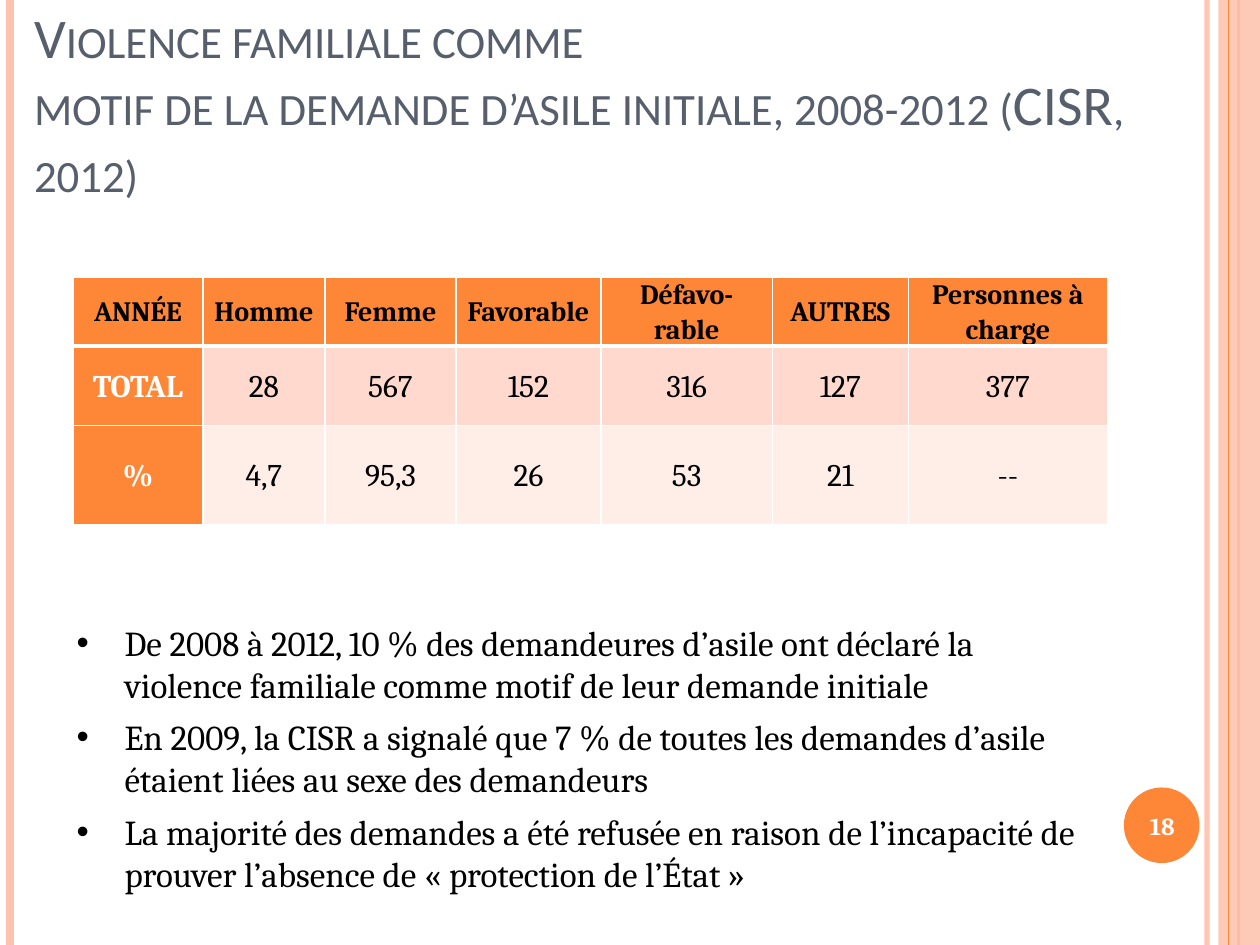
from lxml.etree import SubElement
from pptx import Presentation
from pptx.dml.color import RGBColor
from pptx.enum.shapes import MSO_CONNECTOR, MSO_SHAPE
from pptx.enum.text import MSO_ANCHOR, MSO_AUTO_SIZE, PP_ALIGN
from pptx.oxml import parse_xml
from pptx.oxml.ns import nsdecls, qn
from pptx.util import Inches, Pt

ORANGE, PEACH, WHITE, BLACK, SLATE = "FE8637", "FEC3AE", "FFFFFF", "000000", "575F6D"
WIDTH, HEIGHT = 10, 7.5

HEADING = "Violence familiale comme\vmotif de la demande d’asile initiale, 2008-2012 (CISR, 2012)"
OUTCOMES = [
    ["ANNÉE", "Homme", "Femme", "Favorable", "Défavo-rable", "AUTRES", "Personnes à charge"],
    ["TOTAL", "28", "567", "152", "316", "127", "377"],
    ["%", "4,7", "95,3", "26", "53", "21", "--"],
]
COLUMN_WIDTHS = [1.03, 0.97, 1.04, 1.15, 1.36, 1.08, 1.58]
ROW_HEIGHTS = [0.45, 0.63, 0.79]
ROW_FILLS = [ORANGE, "FFD9CE", "FFEDE8"]
FINDINGS = [
    "De 2008 à 2012, 10 % des demandeures d’asile ont déclaré la violence familiale comme motif de leur demande initiale",
    "En 2009, la CISR a signalé que 7 % de toutes les demandes d’asile étaient liées au sexe des demandeurs",
    "La majorité des demandes a été refusée en raison de l’incapacité de prouver l’absence de « protection de l’État »",
]
PAGE_NUMBER = "18"
STRIPES = [(9.58, PEACH, 3, 93), (0.08, PEACH, 4.5, 100), (9.83, ORANGE, 1.5, 100), (9.75, ORANGE, 0.75, 100)]


def color(value):
    return RGBColor.from_string(value)


def box(*lengths):
    return [Inches(length) for length in lengths]


def style(paragraph, size, tint, bold=False, font="Cambria"):
    for run in paragraph.runs:
        run.font.size = Pt(size)
        run.font.name = font
        run.font.bold = bold
        run.font.color.rgb = color(tint)


def set_opacity(properties, percent):
    tint = next(properties.iter(qn("a:srgbClr")))
    SubElement(tint, qn("a:alpha"), val=str(percent * 1000))


def add_stripe(slide, x, tint, weight, opacity):
    stripe = slide.shapes.add_connector(MSO_CONNECTOR.STRAIGHT, *box(x, 0, x, HEIGHT))
    stripe.line.color.rgb = color(tint)
    stripe.line.width = Pt(weight)
    properties = stripe._element.spPr
    set_opacity(properties, opacity)
    SubElement(properties, qn("a:effectLst"))


def add_solid(slide, preset, place, tint):
    solid = slide.shapes.add_shape(preset, *box(*place))
    solid.shadow.inherit = False
    solid.fill.solid()
    solid.fill.fore_color.rgb = color(tint)
    solid.line.fill.background()
    return solid


def add_frame(slide, place):
    frame = slide.shapes.add_textbox(*box(*place)).text_frame
    frame.word_wrap = True
    return frame


def set_borders(cell, top, bottom):
    for index, (side, weight) in enumerate(zip("LRTB", (1, 1, top, bottom))):
        cell._tc.get_or_add_tcPr().insert(index, parse_xml(
            f'<a:ln{side} {nsdecls("a")} w="{Pt(weight)}"><a:solidFill>'
            f'<a:srgbClr val="{WHITE}"/></a:solidFill></a:ln{side}>'))


def add_decoration(slide):
    for stripe in STRIPES[:3]:
        add_stripe(slide, *stripe)
    band = add_solid(slide, MSO_SHAPE.RECTANGLE, (9.67, 0, WIDTH - 9.67, HEIGHT), PEACH)
    set_opacity(band._element.spPr, 87)
    add_stripe(slide, *STRIPES[3])
    add_solid(slide, MSO_SHAPE.OVAL, (8.92, 6.25, 0.6, 0.6), ORANGE)


def add_heading(slide):
    title = slide.shapes.title
    title.left, title.top, title.width, title.height = box(0.17, 0.67, 9.33, 1)
    frame = title.text_frame
    frame.text = HEADING
    frame.word_wrap = True
    frame.auto_size = MSO_AUTO_SIZE.NONE
    frame.vertical_anchor = MSO_ANCHOR.BOTTOM
    paragraph = frame.paragraphs[0]
    paragraph.alignment = PP_ALIGN.LEFT
    style(paragraph, 32, SLATE, font="Calibri")
    for run in paragraph.runs:
        run.font._element.set("cap", "small")


def add_outcomes(slide):
    place = box(0.58, 2.2, sum(COLUMN_WIDTHS), sum(ROW_HEIGHTS))
    table = slide.shapes.add_table(len(OUTCOMES), len(COLUMN_WIDTHS), *place).table
    table.first_col = True
    for column, width in zip(table.columns, COLUMN_WIDTHS):
        column.width = Inches(width)
    for row, height in zip(table.rows, ROW_HEIGHTS):
        row.height = Inches(height)
    for r, values in enumerate(OUTCOMES):
        for c, value in enumerate(values):
            cell = table.cell(r, c)
            cell.text = value
            cell.vertical_anchor = MSO_ANCHOR.MIDDLE
            cell.margin_left = cell.margin_right = Inches(0.07)
            cell.margin_top = cell.margin_bottom = 0
            cell.fill.solid()
            cell.fill.fore_color.rgb = color(ROW_FILLS[r] if c else ORANGE)
            set_borders(cell, 3 if r == 1 else 1, 3 if r == 0 else 1)
            paragraph = cell.text_frame.paragraphs[0]
            paragraph.alignment = PP_ALIGN.CENTER
            paragraph.line_spacing = 1.07
            style(paragraph, 18 if r else 16, WHITE if r and not c else BLACK, r == 0 or c == 0)


def add_findings(slide):
    frame = add_frame(slide, (0.51, 4.88, 8.29, 2.29))
    frame.text = "\n".join(FINDINGS)
    for paragraph in frame.paragraphs:
        paragraph.space_after = Pt(6)
        style(paragraph, 20, BLACK)
        properties = paragraph._p.get_or_add_pPr()
        properties.set("marL", str(Inches(0.38)))
        properties.set("indent", str(-Inches(0.38)))
        SubElement(properties, qn("a:buFont"), typeface="Arial")
        SubElement(properties, qn("a:buChar"), char="•")


def add_page_number(slide):
    frame = add_frame(slide, (8.89, 6.27, 0.67, 0.57))
    frame.text = PAGE_NUMBER
    frame.vertical_anchor = MSO_ANCHOR.MIDDLE
    frame.paragraphs[0].alignment = PP_ALIGN.CENTER
    style(frame.paragraphs[0], 14, WHITE, True)


def main():
    deck = Presentation()
    deck.slide_width, deck.slide_height = box(WIDTH, HEIGHT)
    slide = deck.slides.add_slide(deck.slide_layouts[5])
    add_decoration(slide)
    add_heading(slide)
    add_outcomes(slide)
    add_findings(slide)
    add_page_number(slide)
    deck.save("out.pptx")


if __name__ == "__main__":
    main()
